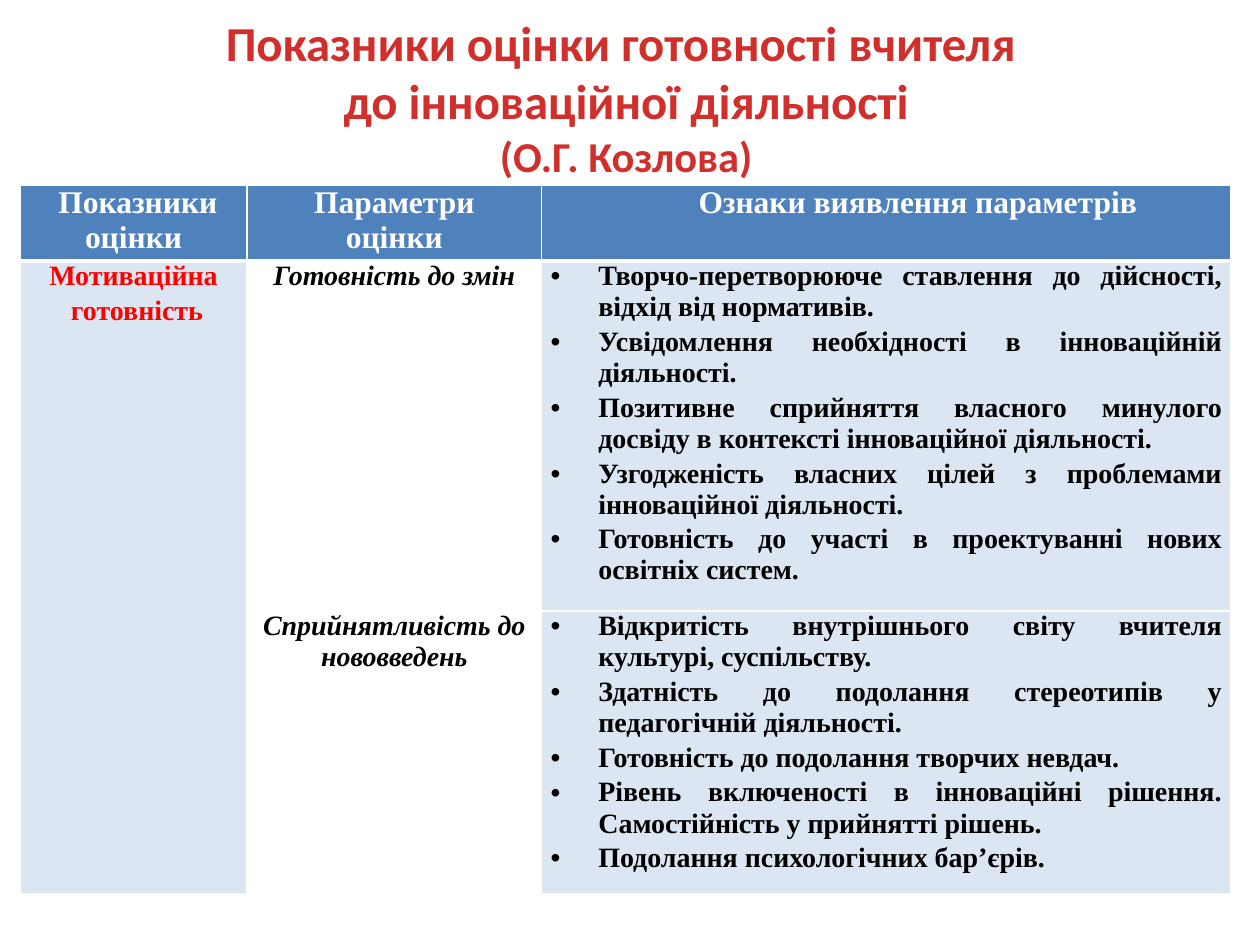
from lxml import etree
from pptx import Presentation
from pptx import util as u
from pptx.dml.color import RGBColor
from pptx.enum import text
from pptx.oxml.ns import qn

WHITE, BLACK, RED = "FFFFFF", "000000", "FF0000"
TITLE_RED, HEADER_BLUE, PALE_BLUE = "D02F2C", "4F81BD", "DCE6F2"
CENTER, JUSTIFY = text.PP_ALIGN.CENTER, text.PP_ALIGN.JUSTIFY


def rgb(value):
    return RGBColor.from_string(value)


class SlideBuilder:
    title_font = "Calibri"
    table_font = "Times New Roman"

    def __init__(self, slide):
        self.slide = slide

    def style(self, paragraph, font, size, color, italic=False):
        for run in paragraph.runs:
            run.font.name = font
            run.font.size = u.Pt(size)
            run.font.bold = True
            run.font.italic = italic
            run.font.color.rgb = rgb(color)

    def title(self, lines, left, top, width, height):
        box = self.slide.shapes.add_textbox(*map(u.Inches, (left, top, width, height)))
        frame = box.text_frame
        frame.word_wrap = True
        frame.margin_top = frame.margin_bottom = 0
        for i, (line, size) in enumerate(lines):
            paragraph = frame.add_paragraph() if i else frame.paragraphs[0]
            paragraph.text = line
            paragraph.alignment = CENTER
            self.style(paragraph, self.title_font, size, TITLE_RED)

    def table(self, left, top, widths, heights):
        size = (left, top, sum(widths), sum(heights))
        table = self.slide.shapes.add_table(
            len(heights), len(widths), *map(u.Inches, size)).table
        for column, width in zip(table.columns, widths):
            column.width = u.Inches(width)
        for row, height in zip(table.rows, heights):
            row.height = u.Inches(height)
        return table

    def borders(self, cell, top=1, bottom=1):
        properties = cell._tc.get_or_add_tcPr()
        sides = {"lnL": 1, "lnR": 1, "lnT": top, "lnB": bottom}
        for i, (side, points) in enumerate(sides.items()):
            line = etree.Element(qn(f"a:{side}"), w=str(u.Pt(points)))
            fill = etree.SubElement(line, qn("a:solidFill"))
            etree.SubElement(fill, qn("a:srgbClr"), val=WHITE)
            properties.insert(i, line)

    def cell(self, cell, lines, size=16, color=BLACK, fill=None, italic=False,
             margin=0, indent=0, before=2, after=0, bulleted=False):
        cell.margin_left = cell.margin_right = u.Inches(0.07)
        cell.margin_top = cell.margin_bottom = 0
        if fill:
            cell.fill.solid()
            cell.fill.fore_color.rgb = rgb(fill)
        else:
            cell.fill.background()
        frame = cell.text_frame
        for i, line in enumerate(lines):
            paragraph = frame.add_paragraph() if i else frame.paragraphs[0]
            paragraph.text = line
            paragraph.alignment = JUSTIFY if bulleted else CENTER
            paragraph.space_before = u.Pt(before)
            paragraph.space_after = u.Pt(after if i == len(lines) - 1 else 0)
            properties = paragraph._p.get_or_add_pPr()
            properties.set("marL", str(u.Inches(margin)))
            properties.set("indent", str(u.Inches(indent)))
            if bulleted:
                etree.SubElement(properties, qn("a:buFont"), typeface="Arial")
                etree.SubElement(properties, qn("a:buChar"), char="•")
            self.style(paragraph, self.table_font, size, color, italic)


def main():
    deck = Presentation()
    deck.slide_width, deck.slide_height = u.Inches(10), u.Inches(7.5)
    builder = SlideBuilder(deck.slides.add_slide(deck.slide_layouts[6]))

    # Title
    builder.title([("Показники оцінки готовності вчителя ", 27.9),
                   ("до інноваційної діяльності", 27.9),
                   ("(О.Г. Козлова)", 24.3)], 0.47, 0.1, 9, 1.36)

    # Table grid
    table = builder.table(0.16, 1.47, (1.8, 2.34, 5.47), (0.55, 2.58, 2.09))

    # Header row: text, left margin, first-line indent, space before
    headers = [("Показники\vоцінки", 0, 0.07, 2),
               ("Параметри\vоцінки", 0, 0, 2),
               ("Ознаки виявлення параметрів", 0.5, 0, 6)]
    for column, (header, margin, indent, before) in enumerate(headers):
        builder.cell(table.cell(0, column), [header], 18, WHITE, HEADER_BLUE,
                     margin=margin, indent=indent, before=before, after=2)

    # Indicator spanning both parameters
    indicator = table.cell(1, 0)
    indicator.merge(table.cell(2, 0))
    builder.cell(indicator, ["Мотиваційна", " готовність"], color=RED, fill=PALE_BLUE)

    # Parameters and their signs
    parameters = {
        "Готовність до змін": [
            "Творчо-перетворююче ставлення до дійсності, відхід від нормативів.",
            "Усвідомлення необхідності в інноваційній діяльності.",
            "Позитивне сприйняття власного минулого досвіду в контексті інноваційної діяльності.",
            "Узгодженість власних цілей з проблемами інноваційної діяльності.",
            "Готовність до участі в проектуванні нових освітніх систем.",
        ],
        "Сприйнятливість до нововведень": [
            "Відкритість внутрішнього світу вчителя культурі, суспільству.",
            "Здатність до подолання стереотипів у педагогічній діяльності.",
            "Готовність до подолання творчих невдач.",
            "Рівень включеності в інноваційні рішення. Самостійність у прийнятті рішень.",
            "Подолання психологічних бар’єрів.",
        ],
    }
    for row, (parameter, signs) in enumerate(parameters.items(), start=1):
        builder.cell(table.cell(row, 1), [parameter], italic=True, indent=-0.1)
        builder.cell(table.cell(row, 2), signs, fill=PALE_BLUE, margin=0.38,
                     indent=-0.38, after=2, bulleted=True)

    # White rules, heavier under the header
    for row in range(3):
        for column in range(3):
            builder.borders(table.cell(row, column), top=3 if row == 1 else 1,
                            bottom=3 if row == 0 else 1)

    deck.save("out.pptx")


if __name__ == "__main__":
    main()
